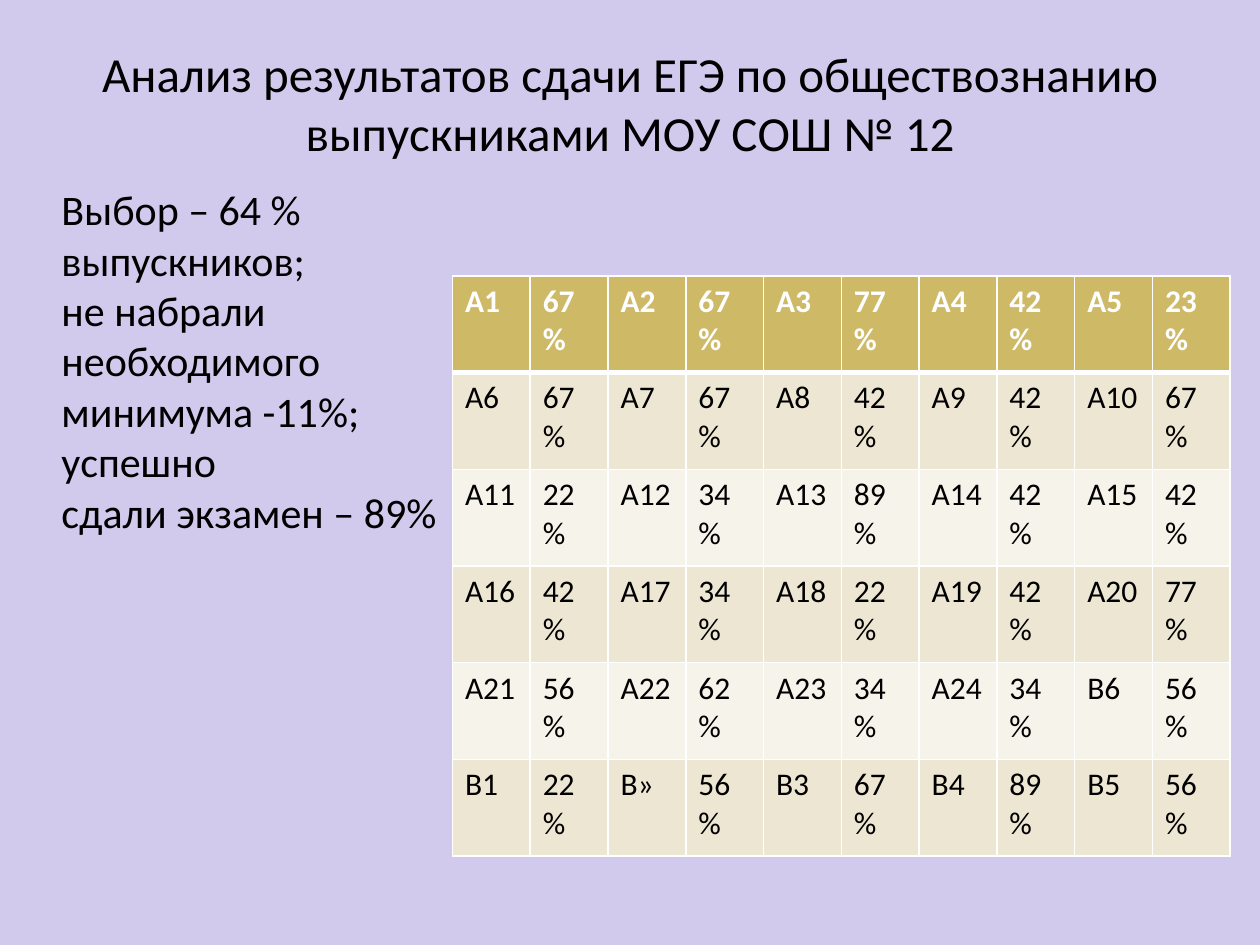
from dataclasses import dataclass

from lxml.etree import SubElement
from pptx import Presentation
from pptx.dml.color import RGBColor as Rgb
from pptx.enum.text import MSO_ANCHOR as Anchor, PP_ALIGN as Align
from pptx.oxml.ns import qn
from pptx.util import Cm, Pt


@dataclass(frozen=True)
class Theme:
    font: str = "Calibri"
    background: str = "D1CAEC"
    text: str = "000000"
    header_text: str = "FFFFFF"
    header_fill: str = "CEB966"
    band_fills: tuple = ("EDE6D3", "F6F3EA")
    border: str = "FFFFFF"
    border_width: float = 1
    header_rule: float = 3
    title_size: int = 28
    body_size: int = 24
    table_size: int = 18


TITLE = "Анализ результатов сдачи ЕГЭ по обществознанию выпускниками МОУ СОШ № 12"
SUMMARY = [
    "Выбор – 64 % выпускников;",
    "не набрали необходимого минимума -11%;",
    "успешно",
    "сдали экзамен – 89%",
]
TASK_RESULTS = [
    "А1 67% А2 67% А3 77% А4 42% А5 23%",
    "А6 67% А7 67% А8 42% А9 42% А10 67%",
    "А11 22% А12 34% А13 89% А14 42% А15 42%",
    "А16 42% А17 34% А18 22% А19 42% А20 77%",
    "А21 56% А22 62% А23 34% А24 34% В6 56%",
    "В1 22% В» 56% В3 67% В4 89% В5 56%",
]


class SlideBuilder:
    def __init__(self, page, theme):
        self.page = page
        self.theme = theme

    def background(self):
        fill = self.page.background.fill
        fill.solid()
        fill.fore_color.rgb = Rgb.from_string(self.theme.background)

    def style_text(self, frame, size, color, bold=False, align=Align.LEFT):
        for para in frame.paragraphs:
            para.alignment = align
            for span in para.runs:
                span.font.name = self.theme.font
                span.font.size = Pt(size)
                span.font.bold = bold
                span.font.color.rgb = Rgb.from_string(color)

    def text(self, lines, left, top, width, height, size,
             align=Align.LEFT, anchor=Anchor.TOP):
        box = self.page.shapes.add_textbox(Cm(left), Cm(top), Cm(width), Cm(height))
        frame = box.text_frame
        frame.word_wrap = True
        frame.vertical_anchor = anchor
        frame.text = "\n".join(lines)
        self.style_text(frame, size, self.theme.text, align=align)

    def cell_borders(self, cell, top, bottom):
        """Draw all four cell edges; must run before the cell fill is set."""
        side = self.theme.border_width
        properties = cell._tc.get_or_add_tcPr()
        for tag, width in (("lnL", side), ("lnR", side), ("lnT", top), ("lnB", bottom)):
            line = SubElement(properties, qn(f"a:{tag}"), w=str(Pt(width)))
            fill = SubElement(line, qn("a:solidFill"))
            SubElement(fill, qn("a:srgbClr"), val=self.theme.border)

    def table(self, rows, left, top, width, height):
        theme = self.theme
        grid = self.page.shapes.add_table(
            len(rows), len(rows[0]), Cm(left), Cm(top), Cm(width), Cm(height)).table
        for row_index, row in enumerate(rows):
            header = row_index == 0
            fill = theme.header_fill if header else theme.band_fills[(row_index - 1) % 2]
            color = theme.header_text if header else theme.text
            upper = theme.header_rule if row_index == 1 else theme.border_width
            lower = theme.header_rule if header else theme.border_width
            for column_index, value in enumerate(row):
                cell = grid.cell(row_index, column_index)
                cell.text_frame.text = value
                self.style_text(cell.text_frame, theme.table_size, color, bold=header)
                self.cell_borders(cell, upper, lower)
                cell.fill.solid()
                cell.fill.fore_color.rgb = Rgb.from_string(fill)


def main():
    deck = Presentation()
    deck.slide_width, deck.slide_height = Cm(25.4), Cm(19.05)
    theme = Theme()
    builder = SlideBuilder(deck.slides.add_slide(deck.slide_layouts[6]), theme)
    builder.background()
    builder.text([TITLE], 1.27, 0.76, 22.86, 2.62, theme.title_size,
                 Align.CENTER, Anchor.MIDDLE)
    builder.text(SUMMARY, 0.99, 3.58, 9.73, 8.97, theme.body_size)
    builder.table([line.split() for line in TASK_RESULTS], 9.12, 5.56, 15.68, 11.7)
    deck.save("out.pptx")


if __name__ == "__main__":
    main()
